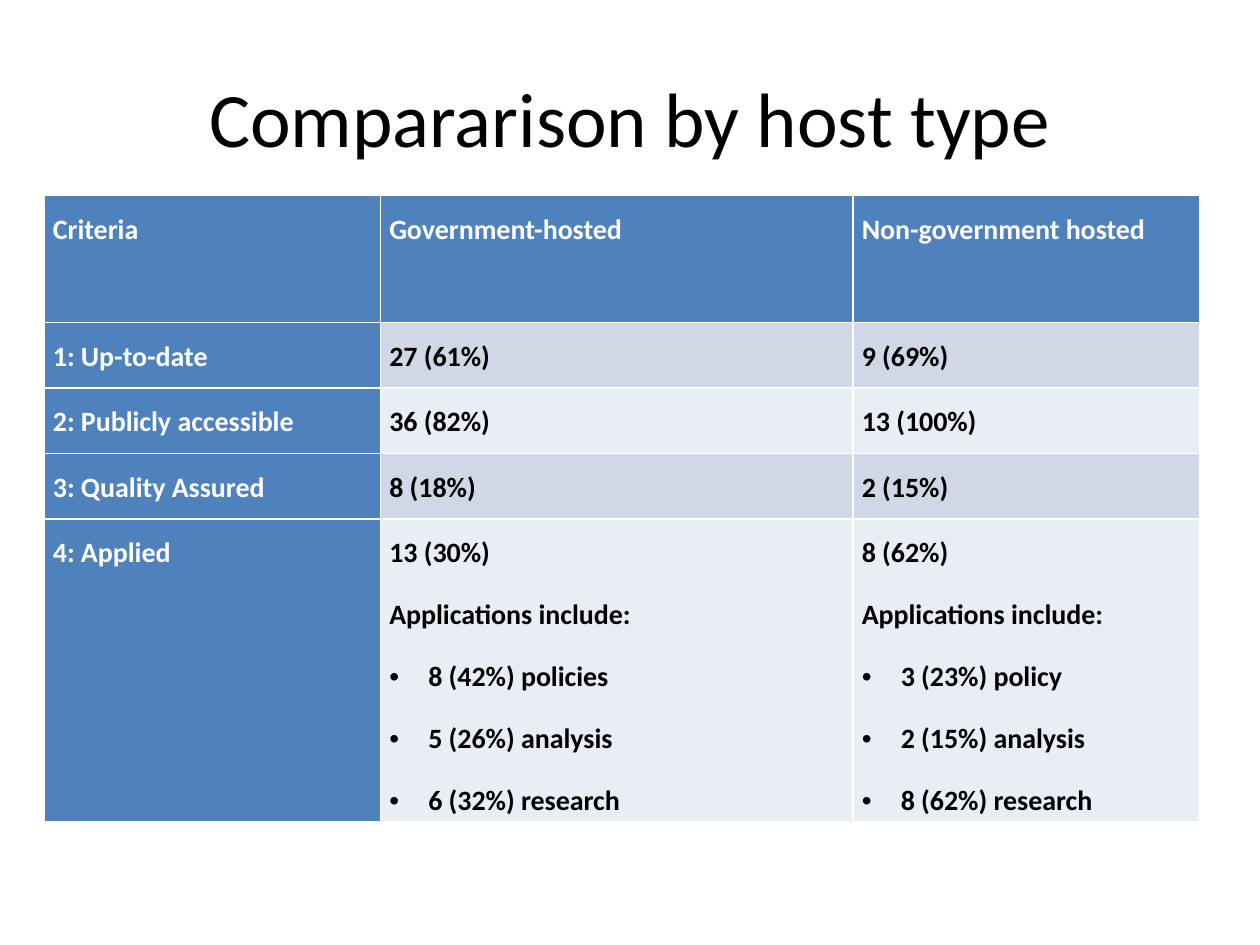
from lxml import etree
from pptx import Presentation
from pptx.dml.color import RGBColor
from pptx.enum.text import MSO_ANCHOR, PP_ALIGN
from pptx.oxml.ns import qn
from pptx.util import Inches, Pt

CENTER, LEFT, JUSTIFY = PP_ALIGN.CENTER, PP_ALIGN.LEFT, PP_ALIGN.JUSTIFY
MIDDLE = MSO_ANCHOR.MIDDLE

FONT = "Calibri"
COLORS = {
    "text": "000000",
    "light": "FFFFFF",
    "header": "4F81BD",
    "odd_row": "D0D8E8",
    "even_row": "E9EDF4",
}
COLUMN_WIDTHS = [2.67, 3.75, 2.75]
ROW_HEIGHTS = [1.01, 0.52, 0.52, 0.52, 2.4]
BULLET = "• "
COMPARISON = [
    ["Criteria", "Government-hosted", "Non-government hosted"],
    ["1: Up-to-date", "27 (61%)", "9 (69%)"],
    ["2: Publicly accessible", "36 (82%)", "13 (100%)"],
    ["3: Quality Assured", "8 (18%)", "2 (15%)"],
    [
        "4: Applied",
        "13 (30%)\nApplications include:\n"
        "• 8 (42%) policies\n• 5 (26%) analysis\n• 6 (32%) research",
        "8 (62%)\nApplications include:\n"
        "• 3 (23%) policy\n• 2 (15%) analysis\n• 8 (62%) research",
    ],
]


def add_bullet(paragraph):
    properties = paragraph._p.get_or_add_pPr()
    properties.set("marL", str(Inches(0.31)))
    properties.set("indent", str(Inches(-0.31)))
    etree.SubElement(properties, qn("a:buFont"), typeface="Arial")
    etree.SubElement(properties, qn("a:buChar"), char=BULLET.strip())


def write_text(frame, text, size, color, align, bold=False, spacing=None, after=0):
    """Write one paragraph per line; lines that start with BULLET get a bullet."""
    for index, line in enumerate(text.split("\n")):
        paragraph = frame.paragraphs[0] if index == 0 else frame.add_paragraph()
        paragraph.alignment = align
        paragraph.space_after = Pt(after)
        if spacing:
            paragraph.line_spacing = spacing
        if line.startswith(BULLET):
            add_bullet(paragraph)
        run = paragraph.add_run()
        run.text = line.removeprefix(BULLET)
        run.font.name = FONT
        run.font.size = Pt(size)
        run.font.bold = bold
        run.font.color.rgb = RGBColor.from_string(COLORS[color])


def style_cell(cell, fill):
    """Give the cell its insets, thin white borders and fill."""
    cell.margin_left = cell.margin_right = Inches(0.07)
    cell.margin_top = cell.margin_bottom = 0
    properties = cell._tc.get_or_add_tcPr()
    for side in ("a:lnL", "a:lnR", "a:lnT", "a:lnB"):
        border = etree.SubElement(properties, qn(side), w=str(Pt(1)))
        solid = etree.SubElement(border, qn("a:solidFill"))
        etree.SubElement(solid, qn("a:srgbClr"), val=COLORS["light"])
    cell.fill.solid()
    cell.fill.fore_color.rgb = RGBColor.from_string(COLORS[fill])


def add_title(slide, left, top, width, height):
    title = slide.shapes.add_textbox(left, top, width, height)
    title.text_frame.word_wrap = True
    title.text_frame.vertical_anchor = MIDDLE
    write_text(title.text_frame, "Compararison by host type",
               size=44, color="text", align=CENTER)


def add_comparison(slide, left, top, width, height):
    table = slide.shapes.add_table(
        len(ROW_HEIGHTS), len(COLUMN_WIDTHS), left, top, width, height).table
    for column, column_width in zip(table.columns, COLUMN_WIDTHS):
        column.width = Inches(column_width)
    for row, row_height in zip(table.rows, ROW_HEIGHTS):
        row.height = Inches(row_height)
    for r, texts in enumerate(COMPARISON):
        for c, text in enumerate(texts):
            is_header = r == 0 or c == 0
            band = "odd_row" if r % 2 else "even_row"
            cell = table.cell(r, c)
            style_cell(cell, "header" if is_header else band)
            write_text(cell.text_frame, text, size=16, bold=True,
                       color="light" if is_header else "text",
                       align=LEFT if r == 0 and c > 0 else JUSTIFY,
                       spacing=1.5, after=6)


def main():
    deck = Presentation()
    deck.slide_width, deck.slide_height = Inches(10), Inches(7.5)
    slide = deck.slides.add_slide(deck.slide_layouts[6])
    add_title(slide, Inches(0.5), Inches(0.3), Inches(9), Inches(1.25))
    add_comparison(slide, Inches(0.35), Inches(1.55),
                   Inches(sum(COLUMN_WIDTHS)), Inches(sum(ROW_HEIGHTS)))
    deck.save("out.pptx")


if __name__ == "__main__":
    main()
